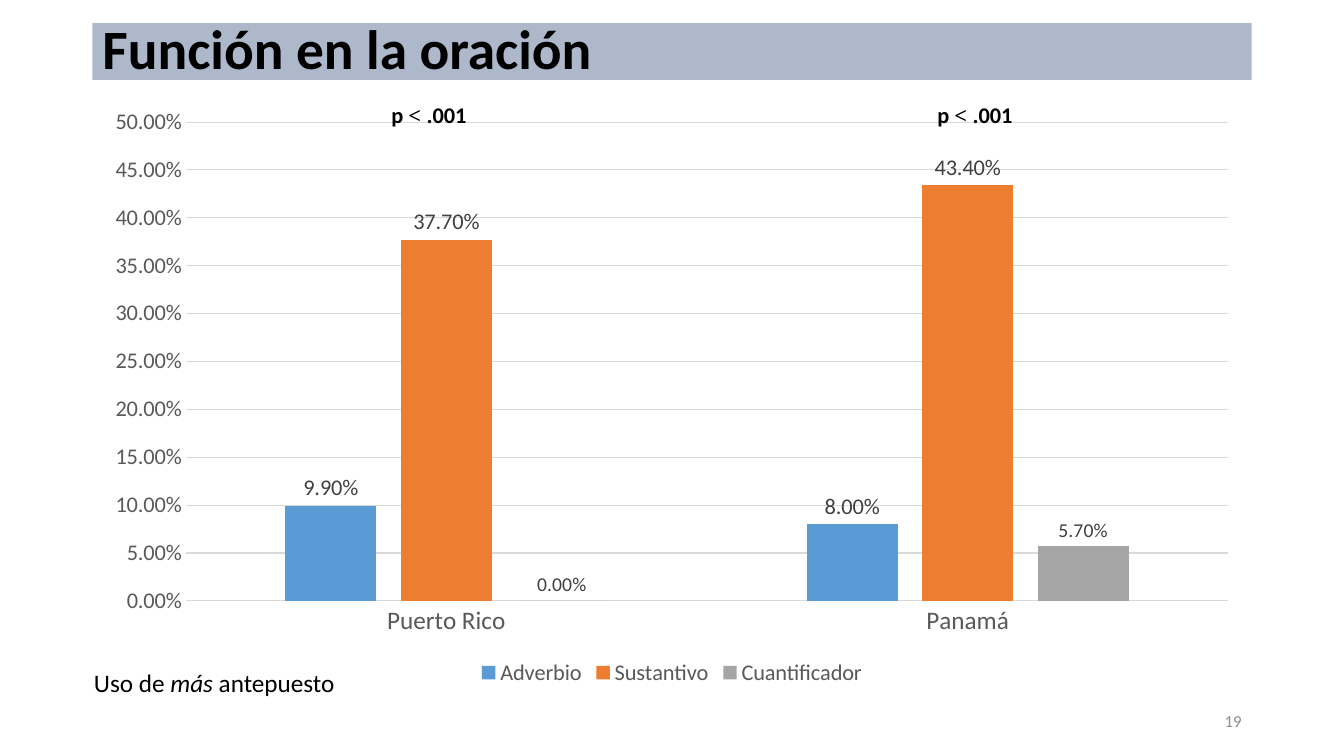
from dataclasses import dataclass

from pptx import Presentation
from pptx.chart.data import CategoryChartData
from pptx.dml.color import RGBColor
from pptx.enum.chart import (XL_CHART_TYPE, XL_LABEL_POSITION,
                             XL_LEGEND_POSITION, XL_TICK_MARK)
from pptx.enum.text import MSO_ANCHOR, MSO_AUTO_SIZE, PP_ALIGN
from pptx.util import Pt

EMU_PER_PX = 9525  # 96 px to the inch


def px(*lengths):
    return [length * EMU_PER_PX for length in lengths]


@dataclass(frozen=True)
class Theme:
    font: str = "Calibri"
    symbol_font: str = "Times New Roman"
    ink: str = "000000"
    banner: str = "ADB9CA"
    axis: str = "595959"
    label: str = "404040"
    grid: str = "D9D9D9"
    number: str = "8C8C8C"
    series: tuple = ("5B9BD5", "ED7D31", "A5A5A5")
    title_size: float = 39.6
    body_size: int = 18
    chart_size: int = 16
    small_size: int = 14
    number_size: int = 12


class SlideBuilder:
    def __init__(self, page, theme):
        self.page = page
        self.theme = theme

    def style(self, font, size, color, **extra):
        """Apply one set of format values to any font object."""
        values = {"name": self.theme.font, "size": Pt(size), **extra}
        for name, value in values.items():
            setattr(font, name, value)
        font.color.rgb = RGBColor.from_string(color)

    def fill_para(self, frame, spans, size, color, align, **extra):
        """Fill a frame with one paragraph of (text, format) spans."""
        para = frame.paragraphs[0]
        para.alignment = align
        for text, changes in spans:
            span = para.add_run()
            span.text = text
            self.style(span.font, size, color, **{**extra, **changes})
        return para

    def title(self, text, *bounds):
        box = self.page.shapes.title
        box.left, box.top, box.width, box.height = px(*bounds)
        box.fill.solid()
        box.fill.fore_color.rgb = RGBColor.from_string(self.theme.banner)
        frame = box.text_frame
        frame.auto_size = MSO_AUTO_SIZE.NONE
        frame.vertical_anchor = MSO_ANCHOR.MIDDLE
        para = self.fill_para(frame, [(text, {})], self.theme.title_size,
                              self.theme.ink, PP_ALIGN.LEFT, bold=True)
        para.line_spacing = 0.9

    def text(self, spans, bounds, size, color, align=PP_ALIGN.CENTER,
             anchor=MSO_ANCHOR.TOP, **extra):
        frame = self.page.shapes.add_textbox(*px(*bounds)).text_frame
        frame.word_wrap = True
        frame.vertical_anchor = anchor
        self.fill_para(frame, spans, size, color, align, **extra)

    def column_chart(self, categories, series, label_sizes, *bounds):
        theme = self.theme
        grid_color = RGBColor.from_string(theme.grid)
        data = CategoryChartData(number_format="0.00%")
        data.categories = categories
        for name, values in series.items():
            data.add_series(name, values)
        chart = self.page.shapes.add_chart(
            XL_CHART_TYPE.COLUMN_CLUSTERED, *px(*bounds), data).chart
        chart.has_title = False
        self.style(chart.font, 10, theme.ink)

        # Legend
        chart.has_legend = True
        chart.legend.position = XL_LEGEND_POSITION.BOTTOM
        chart.legend.include_in_layout = False
        self.style(chart.legend.font, theme.chart_size, theme.axis)

        # Axes
        axes = ((chart.category_axis, theme.body_size),
                (chart.value_axis, theme.chart_size))
        for axis, size in axes:
            axis.major_tick_mark = axis.minor_tick_mark = XL_TICK_MARK.NONE
            self.style(axis.tick_labels.font, size, theme.axis)
        value_axis = chart.value_axis
        value_axis.minimum_scale = 0
        value_axis.maximum_scale = 0.5
        value_axis.major_unit = 0.05
        value_axis.tick_labels.number_format = "0.00%"
        value_axis.tick_labels.number_format_is_linked = False
        value_axis.format.line.fill.background()
        for line in (chart.category_axis.format.line,
                     value_axis.major_gridlines.format.line):
            line.color.rgb = grid_color
            line.width = Pt(0.75)

        # Columns and their labels
        plot = chart.plots[0]
        plot.gap_width = 219
        plot.overlap = -27
        plot.vary_by_categories = False
        for columns, color, size in zip(plot.series, theme.series, label_sizes):
            columns.invert_if_negative = False
            columns.format.fill.solid()
            columns.format.fill.fore_color.rgb = RGBColor.from_string(color)
            labels = columns.data_labels
            label_format = {"show_value": True, "number_format": "0.00%",
                            "number_format_is_linked": False,
                            "position": XL_LABEL_POSITION.OUTSIDE_END}
            for name, value in label_format.items():
                setattr(labels, name, value)
            self.style(labels.font, size, theme.label)


def main():
    deck = Presentation()
    deck.slide_width, deck.slide_height = px(1280, 720)
    theme = Theme()
    title_only = deck.slide_layouts[5]
    builder = SlideBuilder(deck.slides.add_slide(title_only), theme)

    builder.title("Función en la oración", 88, 22, 1104, 54)
    builder.column_chart(
        ["Puerto Rico", "Panamá"],
        {"Adverbio": (0.099, 0.08),
         "Sustantivo": (0.377, 0.434),
         "Cuantificador": (0, 0.057)},
        (theme.chart_size, theme.chart_size, theme.small_size),
        88, 92, 1104, 566)

    # Significance above each group
    significance = [("p ", {}), ("< ", {"name": theme.symbol_font}), (".001", {})]
    for left in (363, 883):
        builder.text(significance, (left, 92, 91, 46), theme.chart_size,
                     theme.ink, bold=True)

    # Slide number and caption
    builder.text([("19", {})], (904, 667, 288, 38), theme.number_size,
                 theme.number, PP_ALIGN.RIGHT, MSO_ANCHOR.MIDDLE)
    builder.text([("Uso de ", {}), ("más ", {"italic": True}), ("antepuesto", {})],
                 (63, 631, 282, 38), theme.body_size, theme.ink)

    deck.save("out.pptx")


if __name__ == "__main__":
    main()
